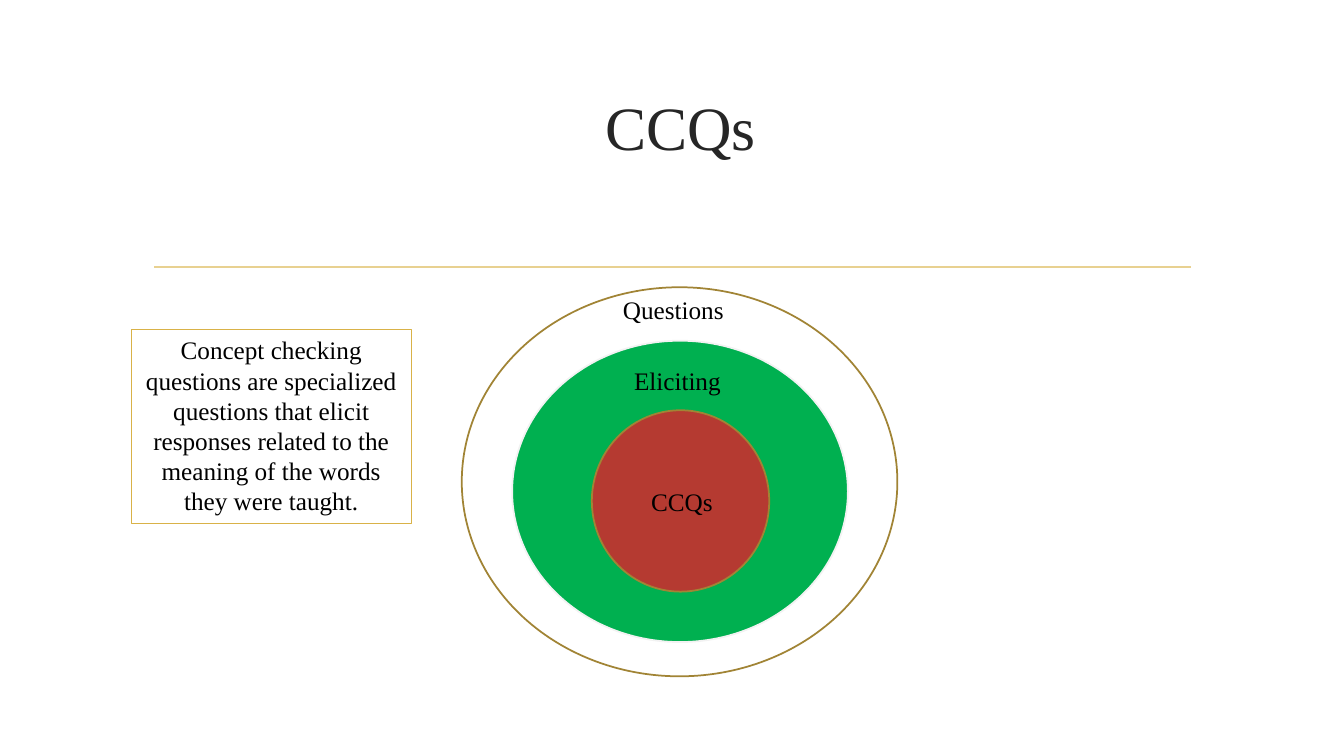
import pptx
import pptx.dml.color
import pptx.enum.shapes
import pptx.enum.text
import pptx.oxml
import pptx.util

Inches = pptx.util.Inches
Pt = pptx.util.Pt
RGBColor = pptx.dml.color.RGBColor
MSO_SHAPE = pptx.enum.shapes.MSO_SHAPE
PP_ALIGN = pptx.enum.text.PP_ALIGN
MSO_ANCHOR = pptx.enum.text.MSO_ANCHOR
MSO_AUTO_SIZE = pptx.enum.text.MSO_AUTO_SIZE

WHITE = RGBColor(0xFF, 0xFF, 0xFF)
BLACK = RGBColor(0x00, 0x00, 0x00)
CHARCOAL = RGBColor(0x26, 0x26, 0x26)
PALE_GOLD = RGBColor(0xE8, 0xD1, 0x91)
GOLD = RGBColor(0xD9, 0xB2, 0x47)
DARK_GOLD = RGBColor(0xA1, 0x84, 0x35)
LIGHT_GREY = RGBColor(0xF2, 0xF2, 0xF2)
GREEN = RGBColor(0x00, 0xB0, 0x50)
RED = RGBColor(0xB5, 0x3A, 0x31)


class SlideBuilder:
    font = "Times New Roman"
    body_size = 18
    line_width = 1.25

    def __init__(self, slide):
        self.slide = slide

    def rule(self, left, right, y, color):
        line = self.slide.shapes.add_connector(
            pptx.enum.shapes.MSO_CONNECTOR.STRAIGHT,
            Inches(left), Inches(y), Inches(right), Inches(y))
        line.line.color.rgb = color
        line.line.width = Pt(self.line_width)
        line._element.spPr.append(pptx.oxml.parse_xml(
            '<a:effectLst xmlns:a="http://schemas.openxmlformats.org/drawingml/2006/main"/>'))

    def shape(self, kind, box, fill, outline, width=line_width):
        shape = self.slide.shapes.add_shape(kind, *map(Inches, box))
        shape.shadow.inherit = False
        if fill is None:
            shape.fill.background()
        else:
            shape.fill.solid()
            shape.fill.fore_color.rgb = fill
        shape.line.color.rgb = outline
        shape.line.width = Pt(width)
        return shape

    def set_text(self, shape, text, align, anchor=MSO_ANCHOR.TOP,
                 size=body_size, color=BLACK, grow=True):
        frame = shape.text_frame
        frame.word_wrap = True
        frame.vertical_anchor = anchor
        frame.auto_size = MSO_AUTO_SIZE.SHAPE_TO_FIT_TEXT if grow else MSO_AUTO_SIZE.NONE
        paragraph = frame.paragraphs[0]
        paragraph.alignment = align
        run = paragraph.add_run()
        run.text = text
        run.font.name = self.font
        run.font.size = Pt(size)
        run.font.color.rgb = color

    def label(self, box, text, align=PP_ALIGN.LEFT, **style):
        self.set_text(self.slide.shapes.add_textbox(*map(Inches, box)), text, align, **style)


def main():
    deck = pptx.Presentation()
    deck.slide_width = Inches(13.33)
    deck.slide_height = Inches(7.5)
    builder = SlideBuilder(deck.slides.add_slide(deck.slide_layouts[6]))

    # Title and rule
    builder.rule(1.53, 11.81, 2.65, PALE_GOLD)
    builder.label((1.5, 0.53, 10.5, 1.43), "CCQs", PP_ALIGN.CENTER,
                  anchor=MSO_ANCHOR.MIDDLE, size=44, color=CHARCOAL, grow=False)

    # Nested ellipses, outermost first
    for box, fill, outline in (
        ((4.58, 2.85, 4.32, 3.86), WHITE, DARK_GOLD),
        ((5.08, 3.38, 3.33, 2.99), GREEN, LIGHT_GREY),
        ((5.87, 4.07, 1.76, 1.8), RED, DARK_GOLD),
    ):
        builder.shape(MSO_SHAPE.OVAL, box, fill, outline)

    # Ellipse labels
    for box, text in (
        ((6.36, 4.78, 1, 0.4), "CCQs"),
        ((6.19, 3.58, 1.33, 0.4), "Eliciting"),
        ((6.08, 2.87, 1.67, 0.4), "Questions"),
    ):
        builder.label(box, text)

    # Definition box
    definition = builder.shape(MSO_SHAPE.RECTANGLE, (1.3, 3.27, 2.78, 1.92), None, GOLD, 0.75)
    builder.set_text(definition,
                     "Concept checking questions are specialized questions that elicit "
                     "responses related to the meaning of the words they were taught.",
                     PP_ALIGN.CENTER)

    deck.save("out.pptx")


if __name__ == "__main__":
    main()
